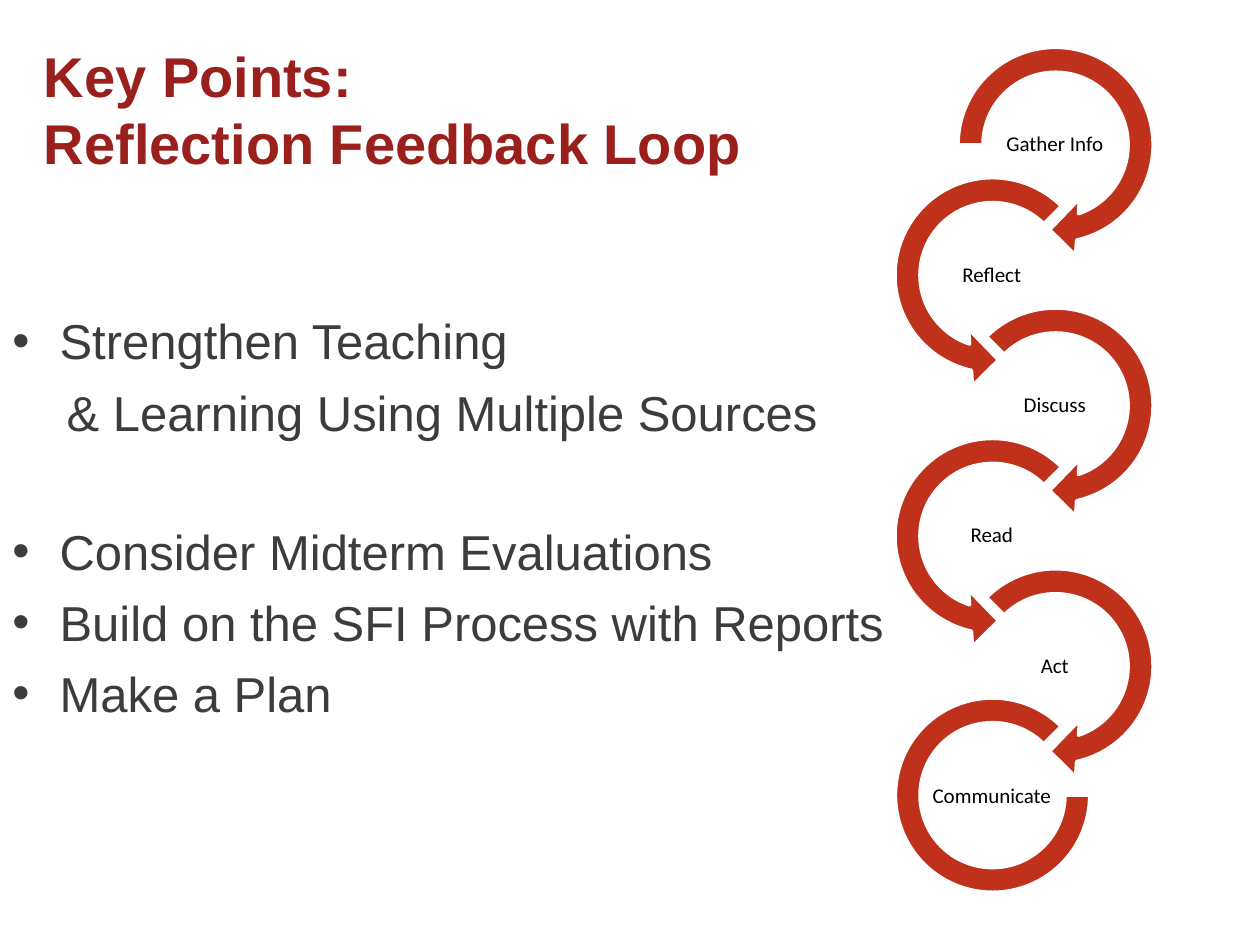
from pptx import Presentation
from pptx.dml.color import RGBColor
from pptx.enum.shapes import MSO_SHAPE
from pptx.enum.text import MSO_ANCHOR, PP_ALIGN
from pptx.oxml import parse_xml
from pptx.oxml.ns import nsdecls
from pptx.util import Pt

DARK_RED = RGBColor(0x99, 0x20, 0x1C)
RING_RED = RGBColor(0xBF, 0x31, 0x1A)
GREY = RGBColor(0x3B, 0x3D, 0x3C)
BLACK = RGBColor(0, 0, 0)
WHITE = RGBColor(255, 255, 255)

MIDDLE = MSO_ANCHOR.MIDDLE
CENTER = PP_ALIGN.CENTER
RIGHT_ARROW = MSO_SHAPE.CIRCULAR_ARROW
LEFT_ARROW = MSO_SHAPE.LEFT_CIRCULAR_ARROW
END_ARC = MSO_SHAPE.BLOCK_ARC

# Text, has a bullet, space before
POINTS = [
    ("Strengthen Teaching", True, 0),
    ("& Learning Using Multiple Sources", False, 7),
    ("Consider Midterm Evaluations", True, 46),
    ("Build on the SFI Process with Reports", True, 7),
    ("Make a Plan", True, 7),
]
STEPS = ["Gather Info", "Reflect", "Discuss", "Read", "Act", "Communicate"]

RING_SIZE = 129.6
RING_PITCH = 74.5
RING_SHIFT = 36
ARC_SIZE = 111


def style_text(para, font_name, size, color, bold=False):
    for span in para.runs:
        span.font.name = font_name
        span.font.size = Pt(size)
        span.font.bold = bold
        span.font.color.rgb = color


def add_title(page, left, top, width, height):
    box = page.shapes.add_textbox(Pt(left), Pt(top), Pt(width), Pt(height))
    frame = box.text_frame
    frame.word_wrap = True
    frame.vertical_anchor = MIDDLE
    frame.text = "Key Points: \vReflection Feedback Loop"
    style_text(frame.paragraphs[0], "Arial", 32, DARK_RED, bold=True)


def add_points(page, left, top, width, height):
    box = page.shapes.add_textbox(Pt(left), Pt(top), Pt(width), Pt(height))
    frame = box.text_frame
    frame.word_wrap = True
    frame.margin_top = Pt(45.7)
    for index, (text, bulleted, space) in enumerate(POINTS):
        para = frame.add_paragraph() if index else frame.paragraphs[0]
        para.text = text
        para.space_before = Pt(space)
        style_text(para, "Arial", 28, GREY)
        # Hanging bullet, or a plain indented continuation line
        properties = para._p.get_or_add_pPr()
        properties.set("marL", str(Pt(27 if bulleted else 31)))
        properties.set("indent", str(Pt(-27 if bulleted else 0)))
        if bulleted:
            properties.append(parse_xml(
                f'<a:buFont {nsdecls("a")} typeface="Arial"/>'))
            properties.append(parse_xml(
                f'<a:buChar {nsdecls("a")} char="•"/>'))


def add_ring(group, kind, left, top, size, adjustments):
    ring = group.shapes.add_shape(kind, Pt(left), Pt(top), Pt(size), Pt(size))
    for index, value in enumerate(adjustments):
        ring.adjustments[index] = value
    ring.shadow.inherit = False
    ring.fill.solid()
    ring.fill.fore_color.rgb = RING_RED
    ring.line.color.rgb = WHITE
    ring.line.width = Pt(2)


def add_label(group, text, left, top, width, height):
    box = group.shapes.add_textbox(Pt(left), Pt(top), Pt(width), Pt(height))
    frame = box.text_frame
    frame.word_wrap = True
    frame.vertical_anchor = MIDDLE
    frame.margin_left = frame.margin_right = Pt(0.6)
    frame.margin_top = frame.margin_bottom = Pt(0.6)
    frame.text = text
    para = frame.paragraphs[0]
    para.alignment = CENTER
    para.line_spacing = 0.9
    style_text(para, "Calibri", 12, BLACK)


def add_loop(page, left, top):
    group = page.shapes.add_group_shape()
    for index, step in enumerate(STEPS):
        on_left = index % 2 == 1
        x = left if on_left else left + RING_SHIFT
        y = top + index * RING_PITCH
        if index == len(STEPS) - 1:
            inset = (RING_SIZE - ARC_SIZE) / 2
            add_ring(group, END_ARC, x + inset, y + 8.4, ARC_SIZE,
                     [0, 189, 0.127])
        elif on_left:
            add_ring(group, LEFT_ARROW, x, y, RING_SIZE,
                     [0.11, 11.423, 63, 189, 0.125])
        else:
            start = 135 if index else 108
            add_ring(group, RIGHT_ARROW, x, y, RING_SIZE,
                     [0.11, 11.423, 45, start, 0.125])
        add_label(group, step, x + 28.4, y + 46.8, 72, 36)


def main():
    deck = Presentation()
    deck.slide_width = Pt(720)
    deck.slide_height = Pt(540)
    page = deck.slides.add_slide(deck.slide_layouts[6])
    add_title(page, 18, 30, 540, 64)
    add_points(page, 0, 132, 684, 276)
    add_loop(page, 502.4, 18)
    deck.save("out.pptx")


if __name__ == "__main__":
    main()
